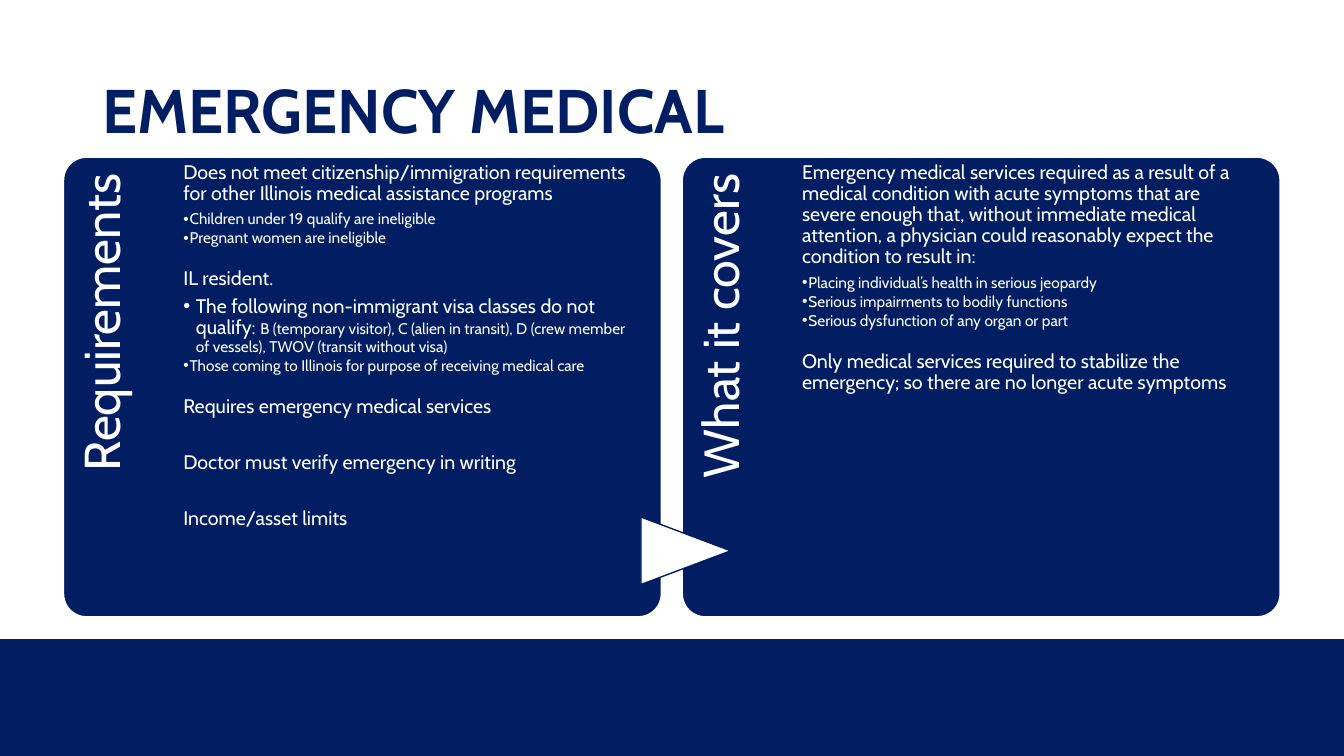
from dataclasses import dataclass

import lxml.etree
import pptx
import pptx.dml.color
import pptx.enum.shapes
import pptx.enum.text
import pptx.oxml.ns
import pptx.util

Pt = pptx.util.Pt
Kind = pptx.enum.shapes.MSO_SHAPE
Align = pptx.enum.text.PP_ALIGN
Anchor = pptx.enum.text.MSO_ANCHOR


@dataclass(frozen=True)
class Theme:
    font: str = "Cabin"
    navy: str = "001E61"
    white: str = "FFFFFF"
    title: int = 44
    label: int = 36
    main: int = 14
    sub: int = 11
    pitch: float = 0.9


@dataclass(frozen=True)
class Item:
    """One list line: text, gap above, bullet indent (0 is none), small tail."""
    text: str
    gap: float = 0
    dent: float = 0
    tail: str = ""


def tint(name):
    return pptx.dml.color.RGBColor.from_string(name)


class Deck:
    def __init__(self, slide, theme):
        self.slide = slide
        self.theme = theme

    def shape(self, kind, area, fill, line=None):
        item = self.slide.shapes.add_shape(kind, *map(Pt, area))
        item.shadow.inherit = False
        item.fill.solid()
        item.fill.fore_color.rgb = tint(fill)
        if line:
            item.line.color.rgb = tint(line)
            item.line.width = Pt(1)
        else:
            item.line.fill.background()
        return item

    def style(self, para, size, color, bold=False):
        para.line_spacing = self.theme.pitch
        para.font.name = self.theme.font
        para.font.size = Pt(size)
        para.font.bold = bold
        para.font.color.rgb = tint(color)

    def place(self, box, area, anchor, inset=None):
        box.left, box.top, box.width, box.height = map(Pt, area)
        frame = box.text_frame
        frame.word_wrap = True
        frame.auto_size = pptx.enum.text.MSO_AUTO_SIZE.NONE
        frame.vertical_anchor = anchor
        if inset:
            (frame.margin_left, frame.margin_top,
             frame.margin_right, frame.margin_bottom) = map(Pt, inset)
        return frame

    def title(self, text, area):
        frame = self.place(self.slide.shapes.title, area, Anchor.MIDDLE)
        frame.text = text
        para = frame.paragraphs[0]
        para.alignment = Align.LEFT
        self.style(para, self.theme.title, self.theme.navy, True)

    def label(self, text, area):
        """Add a heading that reads upward."""
        box = self.slide.shapes.add_textbox(*map(Pt, area))
        box.rotation = 270
        frame = self.place(box, area, Anchor.TOP, (0, 10, 12.2, 0))
        frame.text = text
        para = frame.paragraphs[0]
        para.alignment = Align.RIGHT
        self.style(para, self.theme.label, self.theme.white)

    def bullet(self, para, dent):
        props = para._p.get_or_add_pPr()
        props.set("marL", str(Pt(dent)))
        props.set("indent", str(-Pt(dent)))
        name = "a:buChar" if dent else "a:buNone"
        mark = lxml.etree.SubElement(props, pptx.oxml.ns.qn(name))
        if dent:
            mark.set("char", "•")

    def body(self, slot, items, area):
        box = self.slide.placeholders[slot]
        self.slide.shapes._spTree.append(box._element)  # bring to front
        frame = self.place(box, area, Anchor.TOP, (0, 3.6, 0, 0))
        for num, item in enumerate(items):
            para = frame.add_paragraph() if num else frame.paragraphs[0]
            para.level = 1 if item.dent else 0
            self.bullet(para, item.dent)
            para.alignment = Align.LEFT
            para.space_before = Pt(item.gap)
            para.space_after = Pt(1.7 if item.dent else 4.9)
            small = item.dent and not item.tail
            self.style(para, self.theme.sub if small else self.theme.main,
                       self.theme.white)
            para.add_run().text = item.text
            if item.tail:
                tail = para.add_run()
                tail.text = item.tail
                tail.font.size = Pt(self.theme.sub)


DENT, WIDE = 4.5, 9
GAP, BREAK = 13.7, 20.2
TOP, WIDTH, HEIGHT = 112.3, 427, 328.3

PANELS = [
    ("Requirements", [
        Item("Does not meet citizenship/immigration requirements for other "
             "Illinois medical assistance programs"),
        Item("Children under 19 qualify are ineligible", dent=DENT),
        Item("Pregnant women are ineligible", dent=DENT),
        Item("IL resident.", GAP),
        Item("The following non-immigrant visa classes do not qualify: ",
             dent=WIDE,
             tail="B (temporary visitor), C (alien in transit), D (crew member "
                  "of vessels), TWOV (transit without visa)"),
        Item("Those coming to Illinois for purpose of receiving medical care",
             dent=DENT),
        Item("Requires emergency medical services", GAP),
        Item("Doctor must verify emergency in writing", BREAK),
        Item("Income/asset limits", BREAK),
    ]),
    ("What it covers", [
        Item("Emergency medical services required as a result of a medical "
             "condition with acute symptoms that are severe enough that, "
             "without immediate medical attention, a physician could "
             "reasonably expect the condition to result in:"),
        Item("Placing individual’s health in serious jeopardy", dent=DENT),
        Item("Serious impairments to bodily functions", dent=DENT),
        Item("Serious dysfunction of any organ or part", dent=DENT),
        Item("Only medical services required to stabilize the emergency; so "
             "there are no longer acute symptoms", GAP),
    ]),
]


def main():
    show = pptx.Presentation()
    show.slide_width, show.slide_height = Pt(960), Pt(540)
    theme = Theme()
    deck = Deck(show.slides.add_slide(show.slide_layouts[3]), theme)

    deck.shape(Kind.RECTANGLE, (0, 456.5, 960, 83.5), theme.navy)
    deck.title("EMERGENCY MEDICAL", (66, 28.8, 828, 104.4))
    for slot, (name, items) in enumerate(PANELS, 1):
        left = 45.4 + (slot - 1) * 442
        panel = deck.shape(Kind.ROUNDED_RECTANGLE, (left, TOP, WIDTH, HEIGHT),
                           theme.navy, theme.white)
        panel.adjustments[0] = 0.05
        deck.label(name, (left - 92.2, 203.8, 269.3, 85.7))
        deck.body(slot, items, (left + 85.5, TOP, 318.2, HEIGHT))
    arrow = deck.shape(Kind.FLOWCHART_EXTRACT, (465.8, 361.4, 48.2, 64.1),
                       theme.white, theme.navy)
    arrow.rotation = 90
    show.save("out.pptx")


if __name__ == "__main__":
    main()
